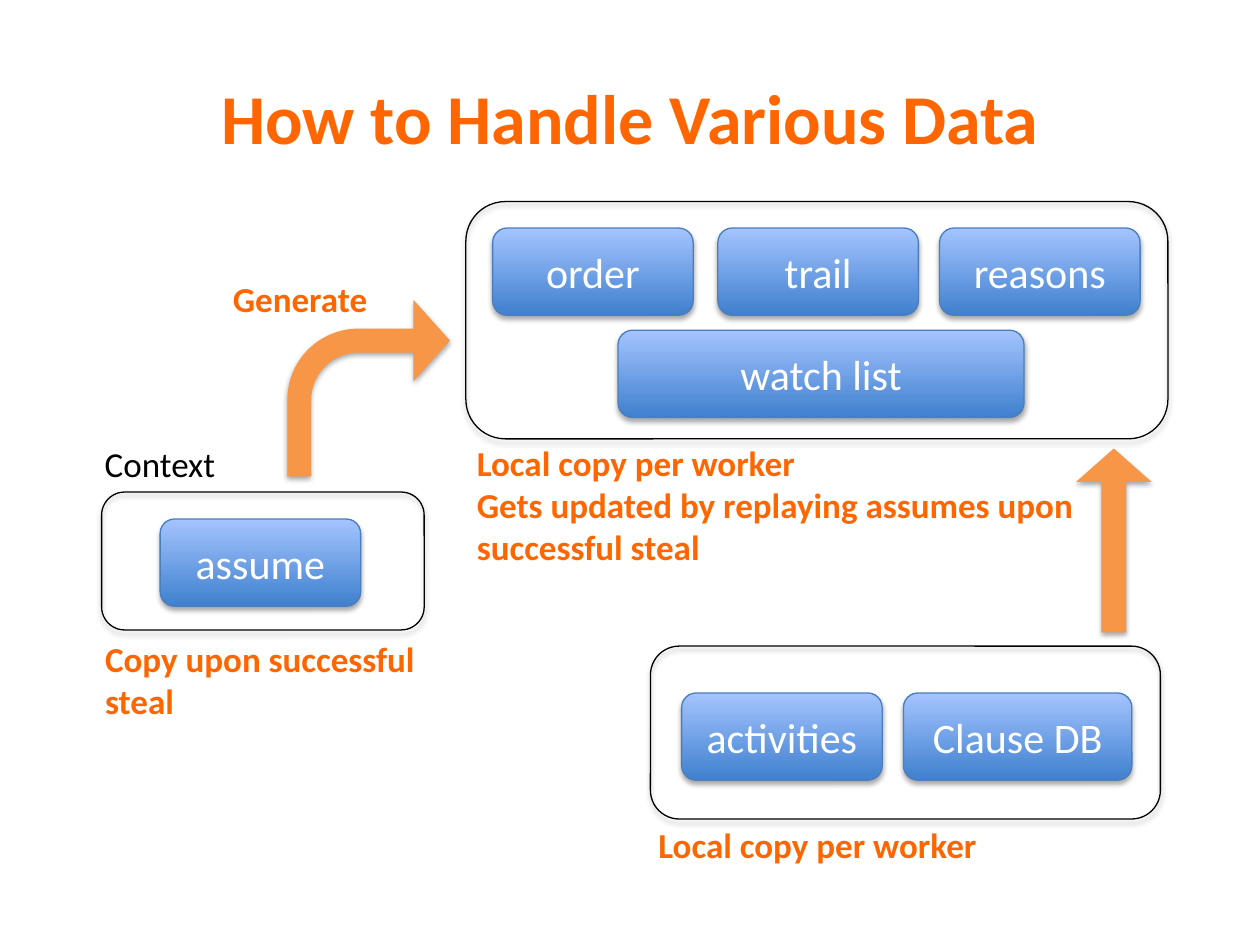
"""Build the slide on how various solver data is handled."""
from typing import NamedTuple

from lxml.etree import SubElement
from pptx import Presentation
from pptx.dml.color import RGBColor
from pptx.enum.shapes import MSO_SHAPE as Kind
from pptx.enum.text import MSO_ANCHOR as Anchor, MSO_AUTO_SIZE as Fit, PP_ALIGN as Align
from pptx.oxml.ns import qn
from pptx.shapes.autoshape import Shape
from pptx.slide import Slide
from pptx.text.text import TextFrame
from pptx.util import Pt

ORANGE = RGBColor(0xFF, 0x66, 0x00)
ARROW = RGBColor(0xF7, 0x96, 0x46)
DEEP = RGBColor(0x3F, 0x80, 0xCE)
PALE = RGBColor(0xA4, 0xC4, 0xFF)
EDGE = RGBColor(0x4B, 0x7E, 0xBC)
BLACK = RGBColor(0x00, 0x00, 0x00)
WHITE = RGBColor(0xFF, 0xFF, 0xFF)

CHIP_W, CHIP_H = 114.6, 49.9
TOP, MID, LOW = 130.3, 188.7, 396


class Box(NamedTuple):
    left: float
    top: float
    width: float
    height: float


class Chip(NamedTuple):
    text: str
    left: float
    top: float
    width: float = CHIP_W


class Note(NamedTuple):
    lines: list[str]
    box: Box
    color: RGBColor = ORANGE
    bold: bool = True


class Arrow(NamedTuple):
    kind: Kind
    box: Box
    bends: list[float]


CHIPS = [
    Chip("order", 281.5, TOP),
    Chip("trail", 410.2, TOP),
    Chip("reasons", 536.9, TOP),
    Chip("watch list", 353.2, MID, 232),
    Chip("assume", 91.5, 296.6),
    Chip("activities", 389.5, LOW),
    Chip("Clause DB", 516.3, LOW, 130.5),
]
FRAMES = [
    Box(266.2, 115.2, 401.2, 135.6),
    Box(371.7, 369.2, 291.4, 98.8),
    Box(58.1, 281.2, 184.3, 78.8),
]
NOTES = [
    Note(["Context"], Box(52.7, 249.3, 111.6, 31.5), BLACK, False),
    Note(["Copy upon successful steal"], Box(53, 360.6, 203.8, 55.7)),
    Note(["Local copy per worker"], Box(369.2, 466.8, 331.2, 31.5)),
    Note(["Local copy per worker",
          "Gets updated by replaying assumes upon successful steal"],
         Box(265.4, 248.7, 359.3, 80)),
    Note(["Generate"], Box(126, 155.1, 105.1, 31.5)),
]
ARROWS = [
    Arrow(Kind.BENT_ARROW, Box(164.2, 171.4, 92.9, 100.8),
          [0.147, 0.25, 0.224, 0.438]),
    Arrow(Kind.UP_ARROW, Box(614.9, 256.3, 43.2, 105.1), [0.328, 0.443]),
]


def write(frame: TextFrame, lines: list[str], *, size: float, color: RGBColor,
          bold: bool = False, align: Align = Align.LEFT,
          anchor: Anchor = Anchor.TOP) -> None:
    """Fill a text frame with one paragraph per line."""
    frame.word_wrap = True
    frame.vertical_anchor = anchor
    for i, line in enumerate(lines):
        para = frame.add_paragraph() if i else frame.paragraphs[0]
        para.alignment = align
        run = para.add_run()
        run.text = line
        font = run.font
        font.name, font.size, font.bold = "Calibri", Pt(size), bold
        font.color.rgb = color


def add_form(slide: Slide, kind: Kind, box: Box) -> Shape:
    """Add a preset shape with a soft shadow below it."""
    form = slide.shapes.add_shape(kind, *map(Pt, box))
    form.shadow.inherit = False
    glow = form.element.spPr.find(qn("a:effectLst"))
    shade = SubElement(glow, qn("a:outerShdw"), blurRad=str(Pt(3.1)),
                       dist=str(Pt(1.8)), dir="5400000", rotWithShape="0")
    tint = SubElement(shade, qn("a:srgbClr"), val=str(BLACK))
    SubElement(tint, qn("a:alpha"), val="35000")
    return form


def add_edge(form: Shape, color: RGBColor) -> None:
    """Give a shape a thin outline."""
    form.line.color.rgb = color
    form.line.width = Pt(0.75)


def add_chip(slide: Slide, chip: Chip) -> None:
    """Draw a labelled data item."""
    box = Box(chip.left, chip.top, chip.width, CHIP_H)
    form = add_form(slide, Kind.ROUNDED_RECTANGLE, box)
    form.fill.gradient()
    form.fill.gradient_angle = 90
    for stop, color, place in zip(form.fill.gradient_stops, (DEEP, PALE), (0, 1)):
        stop.color.rgb = color
        stop.position = place
    add_edge(form, EDGE)
    write(form.text_frame, [chip.text], size=24, color=WHITE,
          align=Align.CENTER, anchor=Anchor.MIDDLE)


def add_frame(slide: Slide, box: Box) -> None:
    """Draw an open frame around a group of items."""
    form = add_form(slide, Kind.ROUNDED_RECTANGLE, box)
    form.fill.background()
    add_edge(form, BLACK)


def add_note(slide: Slide, note: Note) -> None:
    """Place a caption."""
    frame = slide.shapes.add_textbox(*map(Pt, note.box)).text_frame
    write(frame, note.lines, size=20, color=note.color, bold=note.bold)
    frame.auto_size = Fit.SHAPE_TO_FIT_TEXT


def add_arrow(slide: Slide, arrow: Arrow) -> None:
    """Draw a block arrow."""
    form = add_form(slide, arrow.kind, arrow.box)
    for i, bend in enumerate(arrow.bends):
        form.adjustments[i] = bend
    form.fill.solid()
    form.fill.fore_color.rgb = ARROW
    form.line.fill.background()


def main() -> None:
    """Compose and save the slide."""
    deck = Presentation()
    deck.slide_width, deck.slide_height = Pt(720), Pt(540)
    slide = deck.slides.add_slide(deck.slide_layouts[5])
    title = slide.shapes.title
    title.left, title.top, title.width, title.height = map(Pt, (36, 21.6, 648, 90))
    write(title.text_frame, ["How to Handle Various Data"], size=40, color=ORANGE,
          bold=True, align=Align.CENTER, anchor=Anchor.MIDDLE)
    for draw, items in ((add_chip, CHIPS), (add_frame, FRAMES),
                        (add_note, NOTES), (add_arrow, ARROWS)):
        for item in items:
            draw(slide, item)
    deck.save("out.pptx")


if __name__ == "__main__":
    main()
